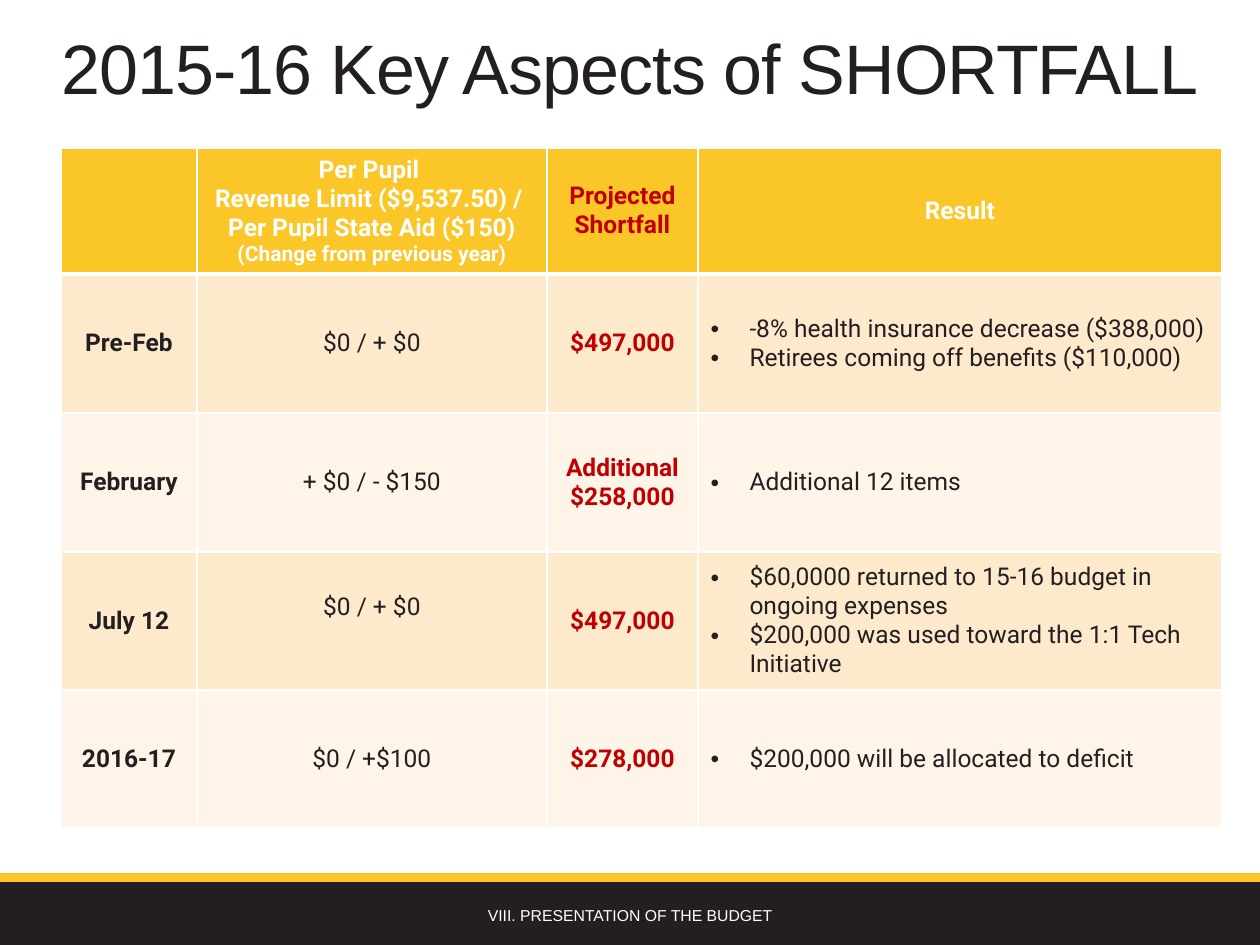
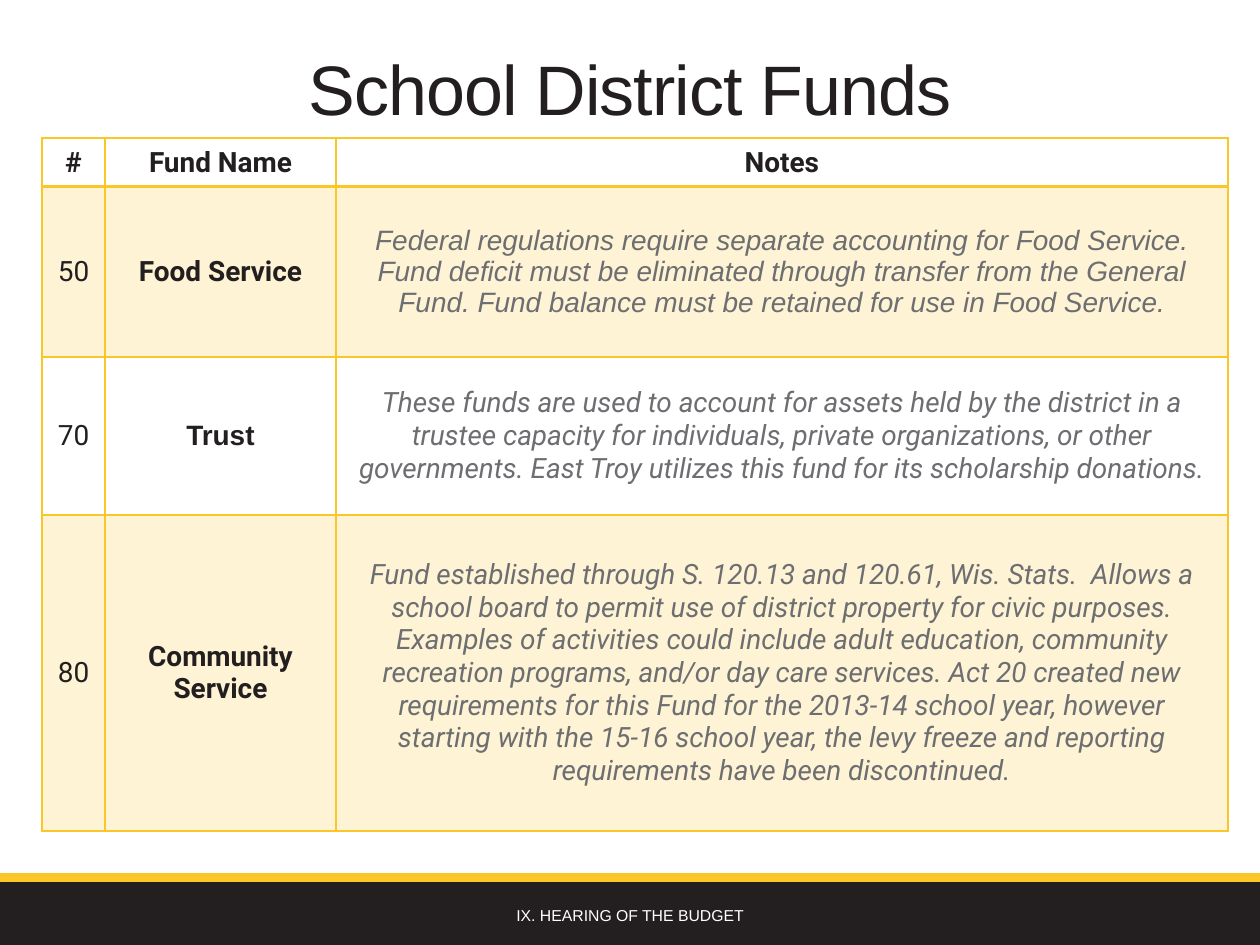
"""Build two school budget slides, each with a title, a table and a footer."""

import dataclasses
import typing

import lxml.etree
import pptx
import pptx.dml.color
import pptx.enum.shapes
import pptx.enum.text
import pptx.oxml.ns
import pptx.util

EMU_PER_PX = 914400 / 126
SLIDE_WIDTH, SLIDE_HEIGHT = 1260, 945
CENTER = pptx.enum.text.PP_ALIGN.CENTER
LEFT = pptx.enum.text.PP_ALIGN.LEFT
MIDDLE = pptx.enum.text.MSO_ANCHOR.MIDDLE
BOTTOM = pptx.enum.text.MSO_ANCHOR.BOTTOM
qn = pptx.oxml.ns.qn


@dataclasses.dataclass(frozen=True)
class Theme:
    ink: str = "231F20"
    gold: str = "FAC628"
    white: str = "FFFFFF"
    red: str = "C00000"
    gray: str = "6D6E71"
    band_dark: str = "FDEACD"
    band_light: str = "FEF5E8"
    heading_font: str = "Arial"
    body_font: str = "Roboto"
    title_size: int = 40
    footer_size: int = 9
    shortfall_size: int = 14
    caption_size: int = 12
    funds_size: int = 16


THEME = Theme()


@dataclasses.dataclass(frozen=True)
class TextStyle:
    size: int
    font: str = THEME.body_font
    color: str = THEME.ink
    bold: bool = False
    italic: bool = False
    bulleted: bool = False
    line_spacing: float = 1.0
    tracking: int = 0


class Box(typing.NamedTuple):
    left: int
    top: int
    width: int
    height: int


class Line(typing.NamedTuple):
    text: str
    style: TextStyle


class Fill(typing.NamedTuple):
    color: str
    opacity: int = 100


@dataclasses.dataclass(frozen=True)
class TableLook:
    left: int
    top: int
    columns: tuple[int, ...]
    rows: tuple[int, ...]
    fills: tuple[Fill | None, ...]
    border: str
    header_rule: int


Cell = tuple[Line, ...]

TITLE = TextStyle(THEME.title_size, THEME.heading_font, line_spacing=1.1, tracking=-50)
FOOTER = TextStyle(THEME.footer_size, THEME.heading_font, THEME.white)

PLAIN = TextStyle(THEME.shortfall_size)
BOLD = dataclasses.replace(PLAIN, bold=True)
HEADER = dataclasses.replace(BOLD, color=THEME.white)
CAPTION = dataclasses.replace(HEADER, size=THEME.caption_size)
AMOUNT = dataclasses.replace(BOLD, color=THEME.red)
RESULT = dataclasses.replace(PLAIN, bulleted=True)

FUND_NUMBER = TextStyle(THEME.funds_size)
FUND_NAME = dataclasses.replace(FUND_NUMBER, bold=True)
FUND_NAME_ARIAL = dataclasses.replace(FUND_NAME, font=THEME.heading_font)
NOTE = dataclasses.replace(FUND_NUMBER, color=THEME.gray, italic=True)
NOTE_ARIAL = dataclasses.replace(NOTE, font=THEME.heading_font)

TITLE_BOXES = {"shortfall": Box(0, 2, SLIDE_WIDTH, 113), "funds": Box(0, 32, SLIDE_WIDTH, 104)}
FOOTER_BOX = Box(380, 890, 500, 50)
BANDS = (
    (Box(0, 882, SLIDE_WIDTH, 63), THEME.ink),
    (Box(0, 873, SLIDE_WIDTH, 9), THEME.gold),
)
BULLET_INDENT = 39
RAISED_MARGIN = 34

SHORTFALL_LOOK = TableLook(
    left=61,
    top=148,
    columns=(136, 350, 151, 524),
    rows=(122, 139, 139, 138, 138),
    fills=(Fill(THEME.gold),) + (Fill(THEME.band_dark), Fill(THEME.band_light)) * 2,
    border=THEME.white,
    header_rule=3,
)
FUNDS_LOOK = TableLook(
    left=42,
    top=138,
    columns=(63, 231, 892),
    rows=(49, 170, 158, 316),
    fills=(None, Fill(THEME.gold, 20), None, Fill(THEME.gold, 20)),
    border=THEME.gold,
    header_rule=2,
)


def lines(style: TextStyle, *texts: str) -> Cell:
    """Give every text the same style."""
    return tuple(Line(text, style) for text in texts)


def shortfall_row(period: str, change: str, amount: tuple[str, ...], results: tuple[str, ...]) -> list[Cell]:
    """Style one period of the shortfall table."""
    return [lines(BOLD, period), lines(PLAIN, change), lines(AMOUNT, *amount), lines(RESULT, *results)]


def fund_row(
    number: str, name: str, note: str, name_style: TextStyle = FUND_NAME, note_style: TextStyle = NOTE
) -> list[Cell]:
    """Style one fund of the funds table."""
    return [lines(FUND_NUMBER, number), lines(name_style, name), lines(note_style, note)]


SHORTFALL_ROWS = [
    [
        (),
        lines(HEADER, "Per Pupil ", "Revenue Limit ($9,537.50) / ", "Per Pupil State Aid ($150)")
        + lines(CAPTION, "(Change from previous year)"),
        lines(AMOUNT, "Projected", "Shortfall"),
        lines(HEADER, "Result"),
    ],
    shortfall_row(
        "Pre-Feb",
        "$0 / + $0",
        ("$497,000",),
        ("-8% health insurance decrease ($388,000)", "Retirees coming off benefits ($110,000)"),
    ),
    shortfall_row("February", "+ $0 / - $150", ("Additional", "$258,000"), ("Additional 12 items",)),
    shortfall_row(
        "July 12",
        "$0 / + $0",
        ("$497,000",),
        (
            "$60,0000 returned to 15-16 budget in ongoing expenses",
            "$200,000 was used toward the 1:1 Tech Initiative",
        ),
    ),
    shortfall_row("2016-17", "$0 / +$100", ("$278,000",), ("$200,000 will be allocated to deficit",)),
]

FUNDS_ROWS = [
    [lines(FUND_NAME, heading) for heading in ("#", "Fund Name", "Notes")],
    fund_row(
        "50",
        "Food Service",
        "Federal regulations require separate accounting for Food Service. Fund deficit must be "
        "eliminated through transfer from the General Fund. Fund balance must be retained for use "
        "in Food Service.",
        note_style=NOTE_ARIAL,
    ),
    fund_row(
        "70",
        "Trust",
        "These funds are used to account for assets held by the district in a trustee capacity for "
        "individuals, private organizations, or other governments. East Troy utilizes this fund for "
        "its scholarship donations.",
        name_style=FUND_NAME_ARIAL,
    ),
    fund_row(
        "80",
        "Community Service",
        "Fund established through S. 120.13 and 120.61, Wis. Stats.  Allows a school board to permit "
        "use of district property for civic purposes. Examples of activities could include adult "
        "education, community recreation programs, and/or day care services. Act 20 created new "
        "requirements for this Fund for the 2013-14 school year, however starting with the 15-16 "
        "school year, the levy freeze and reporting requirements have been discontinued.",
    ),
]


def px(length: int) -> pptx.util.Emu:
    """Turn px into EMU."""
    return pptx.util.Emu(round(length * EMU_PER_PX))


def rgb(color: str) -> pptx.dml.color.RGBColor:
    """Turn a hex string into a colour."""
    return pptx.dml.color.RGBColor.from_string(color)


def apply_format(target: typing.Any, values: dict[str, typing.Any]) -> None:
    """Set each named attribute on the target."""
    for name, value in values.items():
        setattr(target, name, value)


def write_lines(text_frame: typing.Any, content: Cell) -> None:
    """Write one paragraph per line with its style."""
    for index, (text, style) in enumerate(content):
        paragraph = text_frame.add_paragraph() if index else text_frame.paragraphs[0]
        alignment = LEFT if style.bulleted else CENTER
        apply_format(paragraph, {"alignment": alignment, "line_spacing": style.line_spacing})
        run = paragraph.add_run()
        run.text = text
        apply_format(
            run.font,
            {"name": style.font, "size": pptx.util.Pt(style.size), "bold": style.bold, "italic": style.italic},
        )
        run.font.color.rgb = rgb(style.color)
        if style.tracking:
            run._r.get_or_add_rPr().set("spc", str(style.tracking))
        if style.bulleted:
            properties = paragraph._p.get_or_add_pPr()
            properties.set("marL", str(px(BULLET_INDENT)))
            properties.set("indent", str(-px(BULLET_INDENT)))
            lxml.etree.SubElement(properties, qn("a:buFont"), typeface=THEME.heading_font)
            lxml.etree.SubElement(properties, qn("a:buChar"), char="•")


def add_text(slide: typing.Any, box: Box, line: Line, anchor: typing.Any) -> None:
    """Add a wrapped text box with one line."""
    text_frame = slide.shapes.add_textbox(*map(px, box)).text_frame
    apply_format(text_frame, {"word_wrap": True, "vertical_anchor": anchor})
    write_lines(text_frame, (line,))


def set_borders(cell: typing.Any, color: str, top: int, bottom: int) -> None:
    """Draw the four borders of a cell, widths in points."""
    properties = cell._tc.get_or_add_tcPr()
    for side, width in {"L": 1, "R": 1, "T": top, "B": bottom}.items():
        border = lxml.etree.SubElement(properties, qn(f"a:ln{side}"), w=str(pptx.util.Pt(width)))
        solid = lxml.etree.SubElement(border, qn("a:solidFill"))
        lxml.etree.SubElement(solid, qn("a:srgbClr"), val=color)


def fill_cell(cell: typing.Any, fill: Fill | None) -> None:
    """Fill a cell, or leave it clear."""
    if fill is None:
        cell.fill.background()
        return
    cell.fill.solid()
    cell.fill.fore_color.rgb = rgb(fill.color)
    if fill.opacity < 100:
        color = cell._tc.tcPr.find(f".//{qn('a:srgbClr')}[last()]/..[@none]")
        color = cell._tc.tcPr.find(qn("a:solidFill")).find(qn("a:srgbClr")) if color is None else color
        lxml.etree.SubElement(color, qn("a:alpha"), val=str(fill.opacity * 1000))


def add_table(slide: typing.Any, look: TableLook, rows: list[list[Cell]]) -> typing.Any:
    """Add a table with its own fills and borders."""
    box = Box(look.left, look.top, sum(look.columns), sum(look.rows))
    table = slide.shapes.add_table(len(look.rows), len(look.columns), *map(px, box)).table
    apply_format(table, {"first_row": False, "horz_banding": False})
    for column, width in zip(table.columns, look.columns):
        column.width = px(width)
    for row_index, (height, fill, contents) in enumerate(zip(look.rows, look.fills, rows)):
        table.rows[row_index].height = px(height)
        top = look.header_rule if row_index == 1 else 1
        bottom = look.header_rule if row_index == 0 else 1
        for column_index, content in enumerate(contents):
            cell = table.cell(row_index, column_index)
            cell.vertical_anchor = MIDDLE
            set_borders(cell, look.border, top, bottom)
            fill_cell(cell, fill)
            write_lines(cell.text_frame, content)
    return table


def add_slide(presentation: typing.Any, title_box: Box, title: str, footer: str) -> typing.Any:
    """Add a blank slide with bands, title and footer."""
    slide = presentation.slides.add_slide(presentation.slide_layouts[6])
    for box, color in BANDS:
        shape = slide.shapes.add_shape(pptx.enum.shapes.MSO_SHAPE.RECTANGLE, *map(px, box))
        shape.shadow.inherit = False
        shape.fill.solid()
        shape.fill.fore_color.rgb = rgb(color)
        shape.line.fill.background()
    add_text(slide, title_box, Line(title, TITLE), BOTTOM)
    add_text(slide, FOOTER_BOX, Line(footer, FOOTER), MIDDLE)
    return slide


def main() -> None:
    """Build and save the presentation."""
    presentation = pptx.Presentation()
    apply_format(presentation, {"slide_width": px(SLIDE_WIDTH), "slide_height": px(SLIDE_HEIGHT)})
    shortfall = add_slide(
        presentation, TITLE_BOXES["shortfall"], "2015-16 Key Aspects of SHORTFALL", "VIII. PRESENTATION OF THE BUDGET"
    )
    table = add_table(shortfall, SHORTFALL_LOOK, SHORTFALL_ROWS)
    table.cell(3, 1).margin_bottom = px(RAISED_MARGIN)
    funds = add_slide(presentation, TITLE_BOXES["funds"], "School District Funds", "IX. HEARING OF THE BUDGET")
    add_table(funds, FUNDS_LOOK, FUNDS_ROWS)
    presentation.save("out.pptx")


if __name__ == "__main__":
    main()
